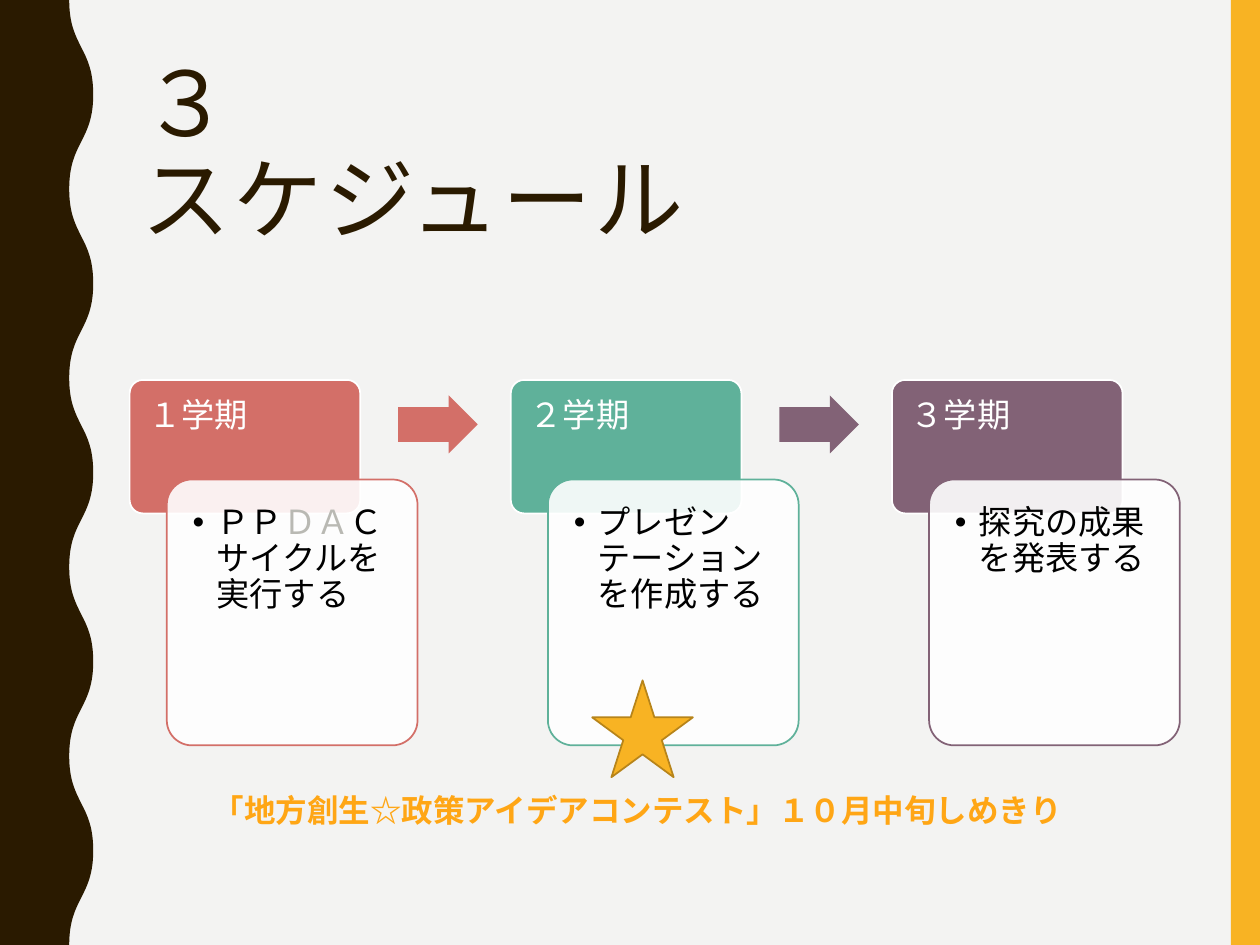
from lxml.etree import SubElement
from pptx import Presentation
from pptx.dml.color import RGBColor
from pptx.enum.shapes import MSO_SHAPE
from pptx.enum.text import MSO_ANCHOR, MSO_AUTO_SIZE, PP_ALIGN
from pptx.oxml.ns import qn
from pptx.util import Pt

BROWN, GOLD, WHITE, BLACK = "2A1A00", "F8B323", "FFFFFF", "000000"
STEP = 217.8  # distance from one term to the next

# Name, colour and text runs of each term
TERMS = [
    ("１学期", "D36F68", [("ＰＰ", BLACK), ("ＤＡ", "B9B9B3"),
                       ("Ｃサイクルを実行する", BLACK)]),
    ("２学期", "5FB19A", [("プレゼンテーションを作成する", BLACK)]),
    ("３学期", "826276", [("探究の成果を発表する", BLACK)]),
]


def paint(target, color):
    """Give a fill a solid colour."""
    target.solid()
    target.fore_color.rgb = RGBColor.from_string(color)


def style(shape, fill, line=None, alpha=None):
    shape.shadow.inherit = False
    paint(shape.fill, fill)
    if alpha:
        clr = shape._element.spPr.find(f"{qn('a:solidFill')}/{qn('a:srgbClr')}")
        SubElement(clr, qn("a:alpha"), val=str(alpha * 1000))
    if line:
        paint(shape.line.fill, line)
        shape.line.width = Pt(1)
    else:
        shape.line.fill.background()


def add_box(slide, kind, box, fill, line=None, adj=(), alpha=None):
    shape = slide.shapes.add_shape(kind, *map(Pt, box))
    for i, value in enumerate(adj):
        shape.adjustments[i] = value
    style(shape, fill, line, alpha)


def add_run(para, text, color, size, font="Calibri", bold=False):
    run = para.add_run()
    run.text = text
    run.font.size = Pt(size)
    run.font.name = font
    run.font.bold = bold
    run.font.color.rgb = RGBColor.from_string(color)
    return run


def add_text(slide, box, runs, size=19, inset=None, wrap=True, bold=False):
    """Place a one-paragraph text box and return the paragraph."""
    frame = slide.shapes.add_textbox(*map(Pt, box)).text_frame
    frame.word_wrap = wrap
    if inset:
        frame.margin_left = frame.margin_top = frame.margin_right = Pt(inset)
    para = frame.paragraphs[0]
    for text, color in runs:
        add_run(para, text, color, size, bold=bold)
    return para


def add_bullet(para, indent):
    para.level = 1
    props = para._p.get_or_add_pPr()
    props.set("marL", str(Pt(indent)))
    props.set("indent", str(-Pt(indent)))
    SubElement(props, qn("a:buFont"), typeface="Arial")
    SubElement(props, qn("a:buChar"), char="•")


def add_wave(slide):
    """Draw the left band, whose edge swings every 54 points."""
    low, high, half = 3960, 5330, 5400  # hundredths of a point
    edge = [(high if k % 2 else low, k * half) for k in range(11)]
    pen = slide.shapes.build_freeform(*edge[0], scale=Pt(1) / 100)
    pen.add_line_segments(edge[1:] + [(0, 10 * half), (0, 0)], close=True)
    band = pen.convert_to_shape()
    style(band, BROWN)
    # Turn the edge's lines into S-curves
    lines = list(band._element.iter(qn("a:lnTo")))
    for line, (x0, y0), (x1, y1) in zip(lines, edge, edge[1:]):
        line.tag = qn("a:cubicBezTo")
        line.remove(line[0])
        middle = (y0 + y1) // 2
        for x, y in ((x0, middle), (x1, middle), (x1, y1)):
            SubElement(line, qn("a:pt"), x=str(x), y=str(y))


def add_title(slide):
    title = slide.shapes.title
    title.left, title.top, title.width, title.height = map(
        Pt, (73.9, 30.2, 601.2, 117.4))
    frame = title.text_frame
    frame.auto_size = MSO_AUTO_SIZE.NONE
    frame.vertical_anchor = MSO_ANCHOR.MIDDLE
    para = frame.paragraphs[0]
    para.alignment = PP_ALIGN.LEFT
    para.line_spacing = 0.9
    for i, text in enumerate(("３", "スケジュール")):
        if i:
            para.add_line_break()
        run = add_run(para, text, BROWN, 51, "Arial Narrow")
        run.font._element.set("spc", "150")


def add_term(slide, x, name, color, runs):
    # Coloured header
    add_box(slide, MSO_SHAPE.ROUNDED_RECTANGLE, (x, 217.1, 131.8, 76.3),
            color, WHITE, [0.1])
    head = add_text(slide, (x, 217.1, 131.8, 50.4), [(name, WHITE)], inset=10.8)
    head.line_spacing = 0.9
    # Card with the task
    add_box(slide, MSO_SHAPE.ROUNDED_RECTANGLE, (x + 21.2, 274, 143.3, 151.9),
            WHITE, color, [0.1], alpha=90)
    task = add_text(slide, (x + 25.2, 278.3, 135.4, 143.3), runs, inset=10.8)
    task.line_spacing = 0.9
    add_bullet(task, 13.7)


def main():
    deck = Presentation()
    deck.slide_width, deck.slide_height = Pt(720), Pt(540)
    slide = deck.slides.add_slide(deck.slide_layouts[5])
    paint(slide.background.fill, "F3F3F2")

    # Side bands and title
    add_box(slide, MSO_SHAPE.RECTANGLE, (703.4, 0, 16.6, 540), GOLD)
    add_wave(slide)
    add_title(slide)

    # Terms, with an arrow in each gap
    for i, (name, color, runs) in enumerate(TERMS):
        x = 74.1 + i * STEP
        if i:
            arrow = TERMS[0][1] if i == 1 else color
            add_box(slide, MSO_SHAPE.RIGHT_ARROW, (x - 64.3, 226, 45.4, 33.1),
                    arrow, adj=[0.6, 0.5])
        add_term(slide, x, name, color, runs)

    # Contest deadline
    add_box(slide, MSO_SHAPE.STAR_5_POINT, (338.4, 388.8, 57.6, 55.4),
            GOLD, "B7841A")
    add_text(slide, (114.5, 448.6, 505.4, 28.8),
             [("「地方創生☆政策アイデアコンテスト」１０月中旬しめきり", "FFA615")],
             size=18, wrap=False, bold=True)
    deck.save("out.pptx")


if __name__ == "__main__":
    main()
